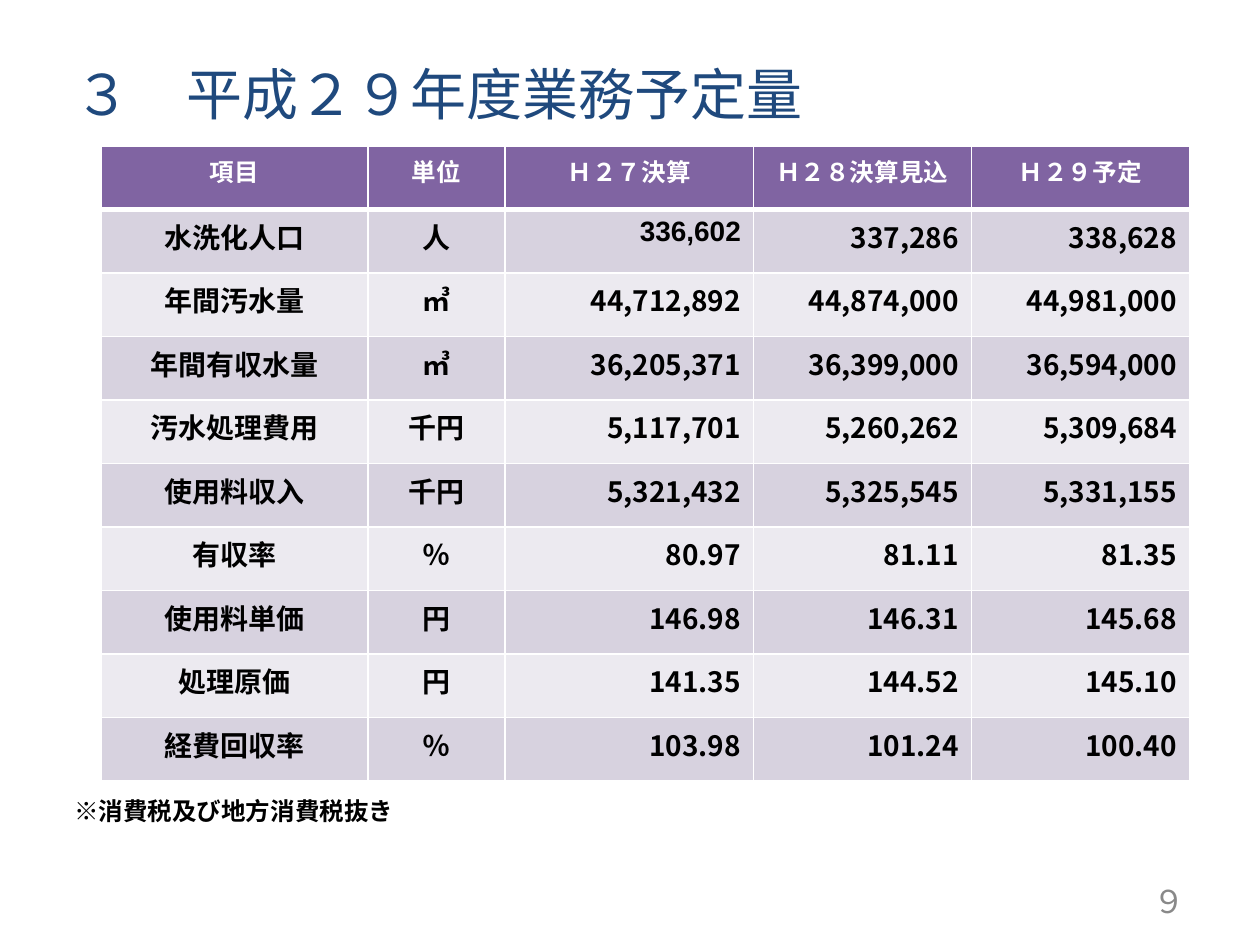
from lxml.etree import SubElement
from pptx import Presentation
from pptx.dml.color import RGBColor
from pptx.enum.text import MSO_ANCHOR as Anchor, PP_ALIGN as Align
from pptx.oxml.ns import qn
from pptx.util import Inches, Pt

COLORS = {
    "title": "1F497D",
    "text": "000000",
    "page": "898989",
    "header": "8064A2",
    "odd": "D7D2DF",
    "even": "ECEAF0",
    "white": "FFFFFF",
}
GOTHIC = "Noto Sans CJK JP"
HEADINGS = ["項目", "単位", "Ｈ２７決算", "Ｈ２８決算見込", "Ｈ２９予定"]
VOLUMES = [
    ["水洗化人口", "人", "336,602", "337,286", "338,628"],
    ["年間汚水量", "㎥", "44,712,892", "44,874,000", "44,981,000"],
    ["年間有収水量", "㎥", "36,205,371", "36,399,000", "36,594,000"],
    ["汚水処理費用", "千円", "5,117,701", "5,260,262", "5,309,684"],
    ["使用料収入", "千円", "5,321,432", "5,325,545", "5,331,155"],
    ["有収率", "％", "80.97", "81.11", "81.35"],
    ["使用料単価", "円", "146.98", "146.31", "145.68"],
    ["処理原価", "円", "141.35", "144.52", "145.10"],
    ["経費回収率", "％", "103.98", "101.24", "100.40"],
]
COLUMN_WIDTHS = [2.12, 1.09, 1.97, 1.73, 1.73]
ROW_HEIGHT = 0.504


def rgb(color):
    return RGBColor.from_string(COLORS[color])


def write(paragraph, words, color, font, layout):
    run = paragraph.add_run()
    run.text = words
    for name, value in font.items():
        setattr(run.font, name, value)
    run.font.color.rgb = rgb(color)
    SubElement(run.font._element, qn("a:ea"), typeface=GOTHIC)
    for name, value in layout.items():
        setattr(paragraph, name, value)


def add_text(slide, box, words, color, font, layout, anchor=Anchor.TOP):
    frame = slide.shapes.add_textbox(*map(Inches, box)).text_frame
    frame.word_wrap = True
    frame.vertical_anchor = anchor
    paragraph = frame.paragraphs[0]
    write(paragraph, words, color, font, layout)
    return paragraph


def set_borders(cell, widths):
    properties = cell._tc.get_or_add_tcPr()
    for side, width in widths.items():
        line = SubElement(properties, qn(f"a:ln{side}"), w=str(Pt(width)))
        fill = SubElement(line, qn("a:solidFill"))
        SubElement(fill, qn("a:srgbClr"), val=COLORS["white"])


def fill_cell(cell, row, column, words):
    is_header = row == 0
    is_number = not is_header and column >= 2
    font = {
        "name": "Arial" if (row, column) == (1, 2) else GOTHIC,
        "size": Pt(14 if is_header else 16),
        "bold": True,
    }
    layout = {"alignment": Align.RIGHT if is_number else Align.CENTER}
    write(cell.text_frame.paragraphs[0], words,
          "white" if is_header else "text", font, layout)
    set_borders(cell, {"L": 1, "R": 1, "T": 3 if row == 1 else 1,
                       "B": 3 if is_header else 1})
    cell.fill.solid()
    band = "odd" if row % 2 else "even"
    cell.fill.fore_color.rgb = rgb("header" if is_header else band)


def add_volume_table(slide):
    rows = [HEADINGS] + VOLUMES
    box = (0.8, 1.16, sum(COLUMN_WIDTHS), ROW_HEIGHT * len(rows))
    table = slide.shapes.add_table(
        len(rows), len(HEADINGS), *map(Inches, box)).table
    for column, width in zip(table.columns, COLUMN_WIDTHS):
        column.width = Inches(width)
    for r, words_in_row in enumerate(rows):
        table.rows[r].height = Inches(ROW_HEIGHT)
        for c, words in enumerate(words_in_row):
            fill_cell(table.cell(r, c), r, c, words)


def main():
    deck = Presentation()
    deck.slide_width, deck.slide_height = Inches(10), Inches(7.5)
    slide = deck.slides.add_slide(deck.slide_layouts[6])

    add_text(slide, (0.49, 0.39, 9.01, 0.69), "３　平成２９年度業務予定量", "title",
             {"name": "Calibri", "size": Pt(32)}, {}, Anchor.MIDDLE)
    note = add_text(slide, (0.49, 6.27, 9.01, 0.46), "※消費税及び地方消費税抜き",
                    "text", {"name": "Calibri", "size": Pt(14), "bold": True},
                    {"space_before": Pt(2.8)})
    indent = Inches(0.38)
    for name, value in {"marL": indent, "indent": -indent}.items():
        note._p.get_or_add_pPr().set(name, str(value))
    add_text(slide, (7.17, 6.95, 2.33, 0.4), "９", "page",
             {"name": "Arial", "size": Pt(18)}, {"alignment": Align.RIGHT},
             Anchor.MIDDLE)
    add_volume_table(slide)

    deck.save("out.pptx")


if __name__ == "__main__":
    main()
